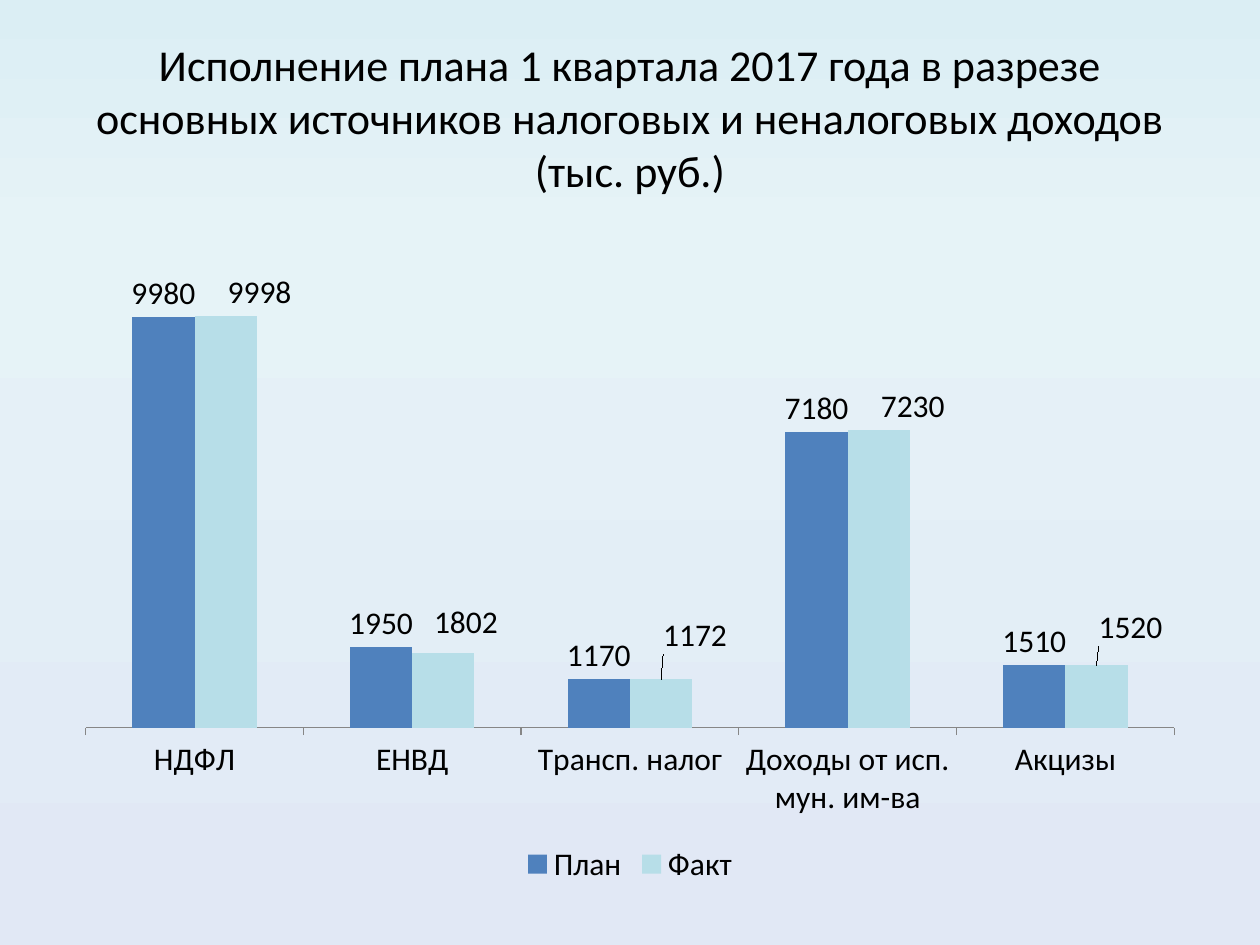
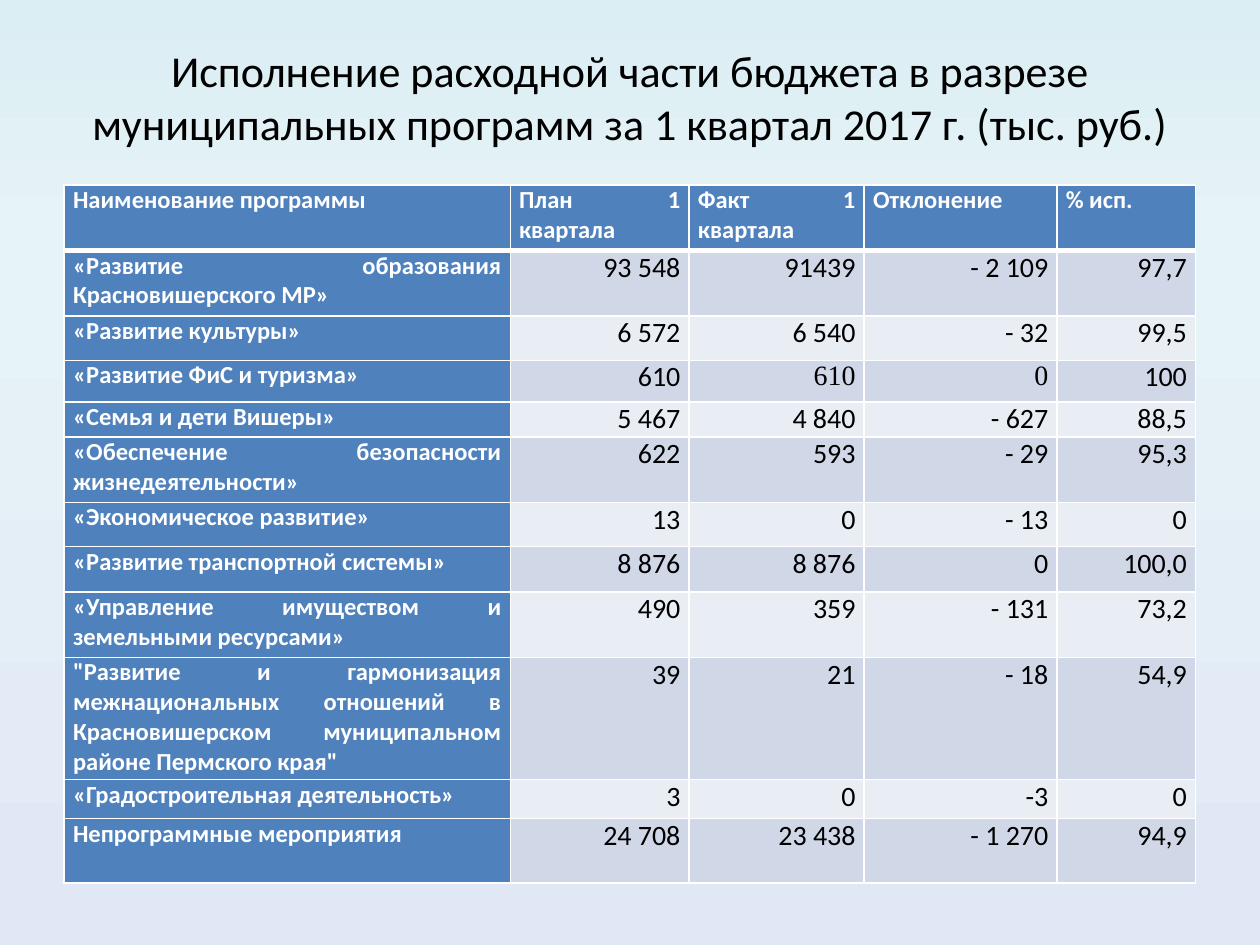
from copy import deepcopy

from lxml import etree
from pptx import Presentation
from pptx.chart.data import CategoryChartData
from pptx.dml.color import RGBColor
from pptx.enum import chart as chart_enum, text
from pptx.oxml import ns
from pptx.util import Inches, Pt

COLORS = {
    "sky": "DBEEF4", "mist": "E6F3F7", "lilac": "E1E8F5",
    "blue": "4F81BD", "aqua": "B7DEE8", "axis": "868686",
    "band_dark": "D0D8E8", "band_light": "E9EDF4",
    "black": "000000", "white": "FFFFFF",
}
FONT = "Calibri"

# Revenue chart
REVENUE_SOURCES = ["НДФЛ", "ЕНВД", "Трансп. налог", "Доходы от исп. мун. им-ва", "Акцизы"]
REVENUE = {"План": [9980, 1950, 1170, 7180, 1510], "Факт": [9998, 1802, 1172, 7230, 1520]}
SERIES_COLORS = ["blue", "aqua"]
# Shift of each "Факт" label, as a share of the chart's width and height
FACT_LABEL_SHIFTS = [(0.03, 0), (0.02, -0.01), (0.03, -0.03), (0.03, 0), (0.03, -0.02)]

# Programme table
COLUMN_WIDTHS = [3.54, 1.42, 1.39, 1.53, 1.1]
HEADER = ["Наименование программы", "План 1 квартала", "Факт 1 квартала", "Отклонение", "% исп."]
HEADER_HEIGHT = 0.52
PROGRAMMES = [  # row height, then the cells
    (0.52, ["«Развитие образования Красновишерского МР»", "93 548", "91439", "- 2 109", "97,7"]),
    (0.35, ["«Развитие культуры»", "6 572", "6 540", "- 32", "99,5"]),
    (0.33, ["«Развитие ФиС и туризма»", "610", "610", "0", "100"]),
    (0.28, ["«Семья и дети Вишеры»", "5 467", "4 840", "- 627", "88,5"]),
    (0.52, ["«Обеспечение безопасности жизнедеятельности»", "622", "593", "- 29", "95,3"]),
    (0.35, ["«Экономическое развитие»", "13", "0", "- 13", "0"]),
    (0.36, ["«Развитие транспортной системы»", "8 876", "8 876", "0", "100,0"]),
    (0.52, ["«Управление имуществом и земельными ресурсами»", "490", "359", "- 131", "73,2"]),
    (0.97, ["\"Развитие и гармонизация межнациональных отношений в Красновишерском "
            "муниципальном районе Пермского края\"", "39", "21", "- 18", "54,9"]),
    (0.31, ["«Градостроительная деятельность»", "3", "0", "-3", "0"]),
    (0.51, ["Непрограммные мероприятия", "24 708", "23 438", "- 1 270", "94,9"]),
]
SERIF_CELLS = {(3, 2), (3, 3)}


def color(name):
    return RGBColor.from_string(COLORS[name])


def format_font(font, size, color_name, bold=False, name=FONT):
    font.name = name
    font.size = Pt(size)
    font.bold = bold
    font.color.rgb = color(color_name)


def set_background(master):
    """Give every slide the same three-stop vertical gradient."""
    fill = master.background.fill
    fill.gradient()
    fill.gradient_angle = 270
    stop_list = master.element.find(".//" + ns.qn("a:gsLst"))
    stop_list.append(deepcopy(stop_list[-1]))
    stops = zip(fill.gradient_stops, [0, 0.25, 1], ["sky", "mist", "lilac"])
    for stop, position, name in stops:
        stop.position = position
        stop.color.rgb = color(name)


def add_titled_slide(presentation, title_text, title_height):
    slide = presentation.slides.add_slide(presentation.slide_layouts[5])
    title = slide.shapes.title
    title.left, title.top = Inches(0.5), Inches(0.3)
    title.width, title.height = Inches(9), Inches(title_height)
    frame = title.text_frame
    frame.text = title_text
    frame.auto_size = text.MSO_AUTO_SIZE.NONE
    frame.vertical_anchor = text.MSO_ANCHOR.MIDDLE
    frame.paragraphs[0].alignment = text.PP_ALIGN.CENTER
    format_font(frame.paragraphs[0].runs[0].font, 25.2, "black")
    return slide


def shift_labels(series, shifts):
    """Move the value label of each point away from its default place."""
    for index in range(len(shifts)):
        label = series.points[index].data_label
        label.position = chart_enum.XL_LABEL_POSITION.OUTSIDE_END
        format_font(label.font, 18, "black")
    labels = series._element.findall(".//" + ns.qn("c:dLbl"))
    for label, shift in zip(labels, shifts):
        layout = etree.Element(ns.qn("c:layout"))
        manual = etree.SubElement(layout, ns.qn("c:manualLayout"))
        for axis, value in zip("xy", shift):
            etree.SubElement(manual, ns.qn("c:" + axis), val=str(value))
        label.find(ns.qn("c:idx")).addnext(layout)


def add_revenue_chart(slide):
    data = CategoryChartData()
    data.categories = REVENUE_SOURCES
    for name, values in REVENUE.items():
        data.add_series(name, values)
    chart = slide.shapes.add_chart(
        chart_enum.XL_CHART_TYPE.COLUMN_CLUSTERED,
        Inches(0.5), Inches(1.75), Inches(9), Inches(5.31), data).chart
    format_font(chart.font, 18, "black")
    chart.has_title = False
    chart.has_legend = True
    chart.legend.position = chart_enum.XL_LEGEND_POSITION.BOTTOM
    chart.legend.include_in_layout = False

    # Axes
    chart.value_axis.visible = False
    chart.value_axis.has_major_gridlines = False
    chart.value_axis.minimum_scale = 0
    chart.category_axis.major_tick_mark = chart_enum.XL_TICK_MARK.OUTSIDE
    chart.category_axis.format.line.color.rgb = color("axis")

    # Columns and their values
    plot = chart.plots[0]
    plot.vary_by_categories = False
    plot.gap_width = 150
    plot.overlap = 0
    for series, name in zip(plot.series, SERIES_COLORS):
        series.format.fill.solid()
        series.format.fill.fore_color.rgb = color(name)
        labels = series.data_labels
        labels.show_value = True
        labels.position = chart_enum.XL_LABEL_POSITION.OUTSIDE_END
        format_font(labels.font, 18, "black")
    shift_labels(plot.series[1], FACT_LABEL_SHIFTS)


def set_borders(cell, **widths):
    properties = cell._tc.get_or_add_tcPr()
    for side in "LRTB":
        line = etree.SubElement(properties, ns.qn("a:ln" + side),
                                w=str(Pt(widths.get(side, 1))))
        fill = etree.SubElement(line, ns.qn("a:solidFill"))
        etree.SubElement(fill, ns.qn("a:srgbClr"), val=COLORS["white"])


def fill_cell(cell, row, column, value):
    is_heading = row == 0 or column == 0
    if is_heading:
        background = "blue"
    else:
        background = "band_dark" if row % 2 else "band_light"
    # A thick line parts the header from the body
    set_borders(cell, B=3 if row == 0 else 1, T=3 if row == 1 else 1)
    cell.fill.solid()
    cell.fill.fore_color.rgb = color(background)
    cell.margin_left = cell.margin_right = Inches(0.07)
    cell.margin_top = cell.margin_bottom = 0

    cell.text_frame.text = value
    paragraph = cell.text_frame.paragraphs[0]
    font = paragraph.runs[0].font
    if is_heading:
        paragraph.alignment = text.PP_ALIGN.JUSTIFY
        format_font(font, 14, "white", bold=True)
    else:
        paragraph.alignment = text.PP_ALIGN.RIGHT
        name = "Times New Roman" if (row, column) in SERIF_CELLS else FONT
        format_font(font, 16, "black", name=name)


def add_programme_table(slide):
    rows = [(HEADER_HEIGHT, HEADER)] + PROGRAMMES
    table = slide.shapes.add_table(
        len(rows), len(HEADER), Inches(0.51), Inches(1.47),
        Inches(sum(COLUMN_WIDTHS)), Inches(sum(height for height, _ in rows))).table
    for column, width in zip(table.columns, COLUMN_WIDTHS):
        column.width = Inches(width)
    for row, (height, values) in enumerate(rows):
        table.rows[row].height = Inches(height)
        for column, value in enumerate(values):
            fill_cell(table.cell(row, column), row, column, value)


def main():
    presentation = Presentation()
    presentation.slide_width, presentation.slide_height = Inches(10), Inches(7.5)
    set_background(presentation.slide_master)

    # Revenue by source
    slide = add_titled_slide(
        presentation, "Исполнение плана 1 квартала 2017 года в разрезе основных "
        "источников налоговых и неналоговых доходов (тыс. руб.)", 1.25)
    add_revenue_chart(slide)

    # Spending by programme
    slide = add_titled_slide(
        presentation, "Исполнение расходной части бюджета в разрезе "
        "муниципальных программ за 1 квартал 2017 г. (тыс. руб.)", 0.93)
    add_programme_table(slide)

    presentation.save("out.pptx")


if __name__ == "__main__":
    main()
